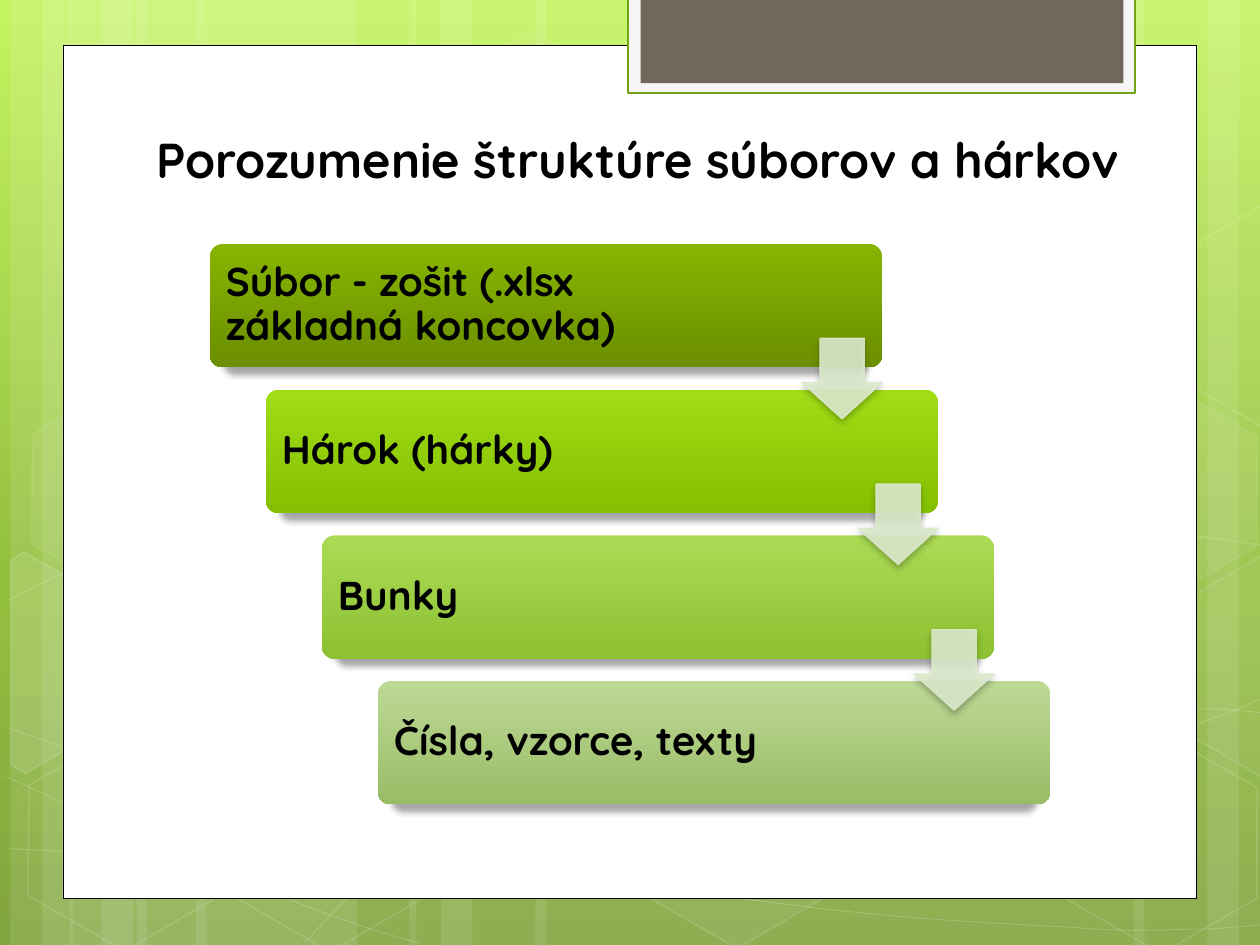
from math import cos, radians, sin

from lxml import etree
from pptx import Presentation
from pptx.dml.color import RGBColor
from pptx.enum import shapes, text
from pptx.oxml.ns import qn
from pptx.util import Pt

WHITE = RGBColor(0xFF, 0xFF, 0xFF)
BLACK = RGBColor(0, 0, 0)
PALE = RGBColor(0xF5, 0xF5, 0xF5)
GREEN = RGBColor(0x74, 0xA5, 0x10)
BROWN = RGBColor(0x71, 0x68, 0x5A)
MINT = RGBColor(0xDC, 0xEA, 0xCC)
FONT = "Quicksand"
KIND = shapes.MSO_SHAPE
ANCHOR = text.MSO_ANCHOR

WIDE, HIGH = 720, 540
TILT = 30
BACK = [(0, "C3F35F"), (62, "93BF3F"), (100, "81A53E")]

TITLE = "Porozumenie štruktúre súborov a hárkov"
STEPS = [  # text, top colour, bottom colour
    ("Súbor - zošit (.xlsx základná koncovka)", "86B400", "6B8F00"),
    ("Hárok (hárky)", "A0DD15", "85BF01"),
    ("Bunky", "ABDB55", "8DC032"),
    ("Čísla, vzorce, texty", "BDD995", "99BC67"),
]

# left, width
STRIPES = [(78, 126), (6, 36), (24, 60), (112, 126), (40, 36), (58, 60),
           (528, 126), (690, 36), (648, 60), (306, 222), (234, 36), (252, 60)]

# start point, then cubic pieces (two handles and an end) or straight ends
CURVES = [
    [(5, 485), (44, 487, 83, 489, 137, 488), (191, 487, 258, 486, 330, 479),
     (402, 472, 504, 458, 570, 444), (636, 431, 703, 409, 725, 397)],
    [(5, 343), (26, 332, 47, 321, 87, 310), (128, 299, 186, 284, 250, 279),
     (314, 274, 392, 273, 471, 279), (550, 284, 682, 307, 725, 312)],
    [(4, 444), (91, 484, 178, 523, 240, 539)],
    [(5, 416), (27, 424, 50, 432, 92, 444), (134, 454, 197, 472, 257, 485),
     (317, 497, 392, 510, 452, 517), (512, 525, 576, 528, 614, 530),
     (652, 533, 662, 531, 680, 531), (699, 531, 712, 529, 725, 528)],
    [(174, 539), (187, 525, 200, 510, 217, 498), (235, 485, 259, 470, 279, 460),
     (300, 450, 312, 446, 338, 438), (364, 431, 413, 421, 438, 416),
     (464, 411, 467, 411, 490, 410), (512, 408, 547, 405, 572, 405),
     (597, 404, 638, 405, 638, 405), (686, 405),
     (699, 405, 711, 406, 718, 407), (724, 408, 722, 407, 724, 408)],
]

# left, top, fill opacity, line opacity
HEXES = [(240.5, 26, 4, 8), (358, 424, 6, 12), (8, 425.5, 0, 12),
         (10, 224.5, 7, 8), (125.5, 426, 0, 12), (542, 326, 10, 12),
         (600.5, 427, 0, 12), (600.5, 226, 7, 8)]

# centre, points, fill opacity: hexagons cut by the slide edge
CUTS = [
    ((25.9, 385.2), [(6, 320.5), (13.5, 315.5), (69, 347), (68.5, 410.5),
                     (14.5, 442), (6, 437)], 10),
    ((709.2, 374.4), [(667, 349), (721, 317.5), (726.5, 321), (726.5, 441.5),
                      (721.5, 444), (667, 412.5)], 4),
    ((709.2, 173.5), [(667, 149), (721, 117.5), (727, 121), (726.5, 241),
                      (721.5, 244), (667, 212.5)], 0),
]


def fade(part, share):
    """Set the opacity, in percent, of the solid fill inside part."""
    tone = part.find(qn("a:solidFill")).find(qn("a:srgbClr"))
    etree.SubElement(tone, qn("a:alpha"), val=str(share * 1000))


def paint(shape, fill=None, share=100, line=None, width=1, clear=100):
    """Give a shape its fill and line, each with an opacity in percent."""
    shape.shadow.inherit = False
    props = shape.element.spPr
    if fill is None or share == 0:
        shape.fill.background()
    else:
        shape.fill.solid()
        shape.fill.fore_color.rgb = fill
        if share < 100:
            fade(props, share)
    if line is None:
        shape.line.fill.background()
    else:
        shape.line.color.rgb = line
        shape.line.width = Pt(width)
        if clear < 100:
            fade(props.find(qn("a:ln")), clear)
    return shape


def blend(owner, fill, stops):
    """Fill the owner with a gradient running from top to bottom."""
    fill.gradient()
    fill.gradient_angle = 270
    group = owner.element.find(".//" + qn("a:gsLst"))
    for old in list(group):
        group.remove(old)
    for place, tone in stops:
        stop = etree.SubElement(group, qn("a:gs"), pos=str(place * 1000))
        etree.SubElement(stop, qn("a:srgbClr"), val=tone)


def shade(shape, share, blur, drop, scale=100):
    """Add a black shadow that falls straight down."""
    group = shape.element.spPr.find(qn("a:effectLst"))
    cast = etree.SubElement(
        group, qn("a:outerShdw"), blurRad=str(Pt(blur)), dist=str(Pt(drop)),
        dir="5400000", sx=str(scale * 1000), algn="b", rotWithShape="0")
    tone = etree.SubElement(cast, qn("a:srgbClr"), val="000000")
    etree.SubElement(tone, qn("a:alpha"), val=str(share * 1000))


def put(slide, kind, *box):
    return slide.shapes.add_shape(kind, *map(Pt, box))


def trace(slide, points, close):
    (x, y), *rest = [(Pt(a), Pt(b)) for a, b in points]
    pen = slide.shapes.build_freeform(x, y)
    pen.add_line_segments(rest, close=close)
    return pen.convert_to_shape()


def bend(slide, curve):
    """Trace the ends of the pieces, then make the cubic ones curved."""
    shape = trace(slide, [piece[-2:] for piece in curve], False)
    legs = list(shape.element.iter(qn("a:lnTo")))
    for leg, piece in zip(legs, curve[1:]):
        if len(piece) == 2:
            continue
        arc = etree.Element(qn("a:cubicBezTo"))
        for x, y in zip(piece[::2], piece[1::2]):
            etree.SubElement(arc, qn("a:pt"), x=str(Pt(x) - shape.left),
                             y=str(Pt(y) - shape.top))
        leg.getparent().replace(leg, arc)
    return shape


def lean(slide, centre, points):
    """Trace the outline upright, then tilt the shape into place."""
    (mx, my), c, s = centre, cos(radians(TILT)), sin(radians(TILT))
    flat = [(mx + (x - mx) * c + (y - my) * s, my + (y - my) * c - (x - mx) * s)
            for x, y in points]
    shape = trace(slide, flat + flat[:1], True)
    shape.rotation = TILT
    return shape


def write(slide, words, box, size, anchor, inset, space=1.0):
    frame = slide.shapes.add_textbox(*map(Pt, box)).text_frame
    frame.word_wrap = True
    frame.vertical_anchor = anchor
    frame.margin_left = frame.margin_right = Pt(7.2)
    frame.margin_top = frame.margin_bottom = Pt(inset)
    para = frame.paragraphs[0]
    para.line_spacing = space
    run = para.add_run()
    run.text = words
    run.font.name, run.font.size, run.font.bold = FONT, Pt(size), True
    run.font.color.rgb = BLACK


def scene(slide):
    """Draw the green backdrop and the white panel."""
    blend(slide, slide.background.fill, BACK)
    for left, width in STRIPES:
        paint(put(slide, KIND.RECTANGLE, left, 0, width, HIGH), WHITE, 10)
    for curve in CURVES:
        paint(bend(slide, curve), line=WHITE, width=0.5, clear=20)
    for left, top, share, clear in HEXES:
        hexa = put(slide, KIND.HEXAGON, left, top, 126, 109.5)
        hexa.rotation = TILT
        hexa.adjustments[0], hexa.adjustments[1] = 0.285, 1.155
        paint(hexa, WHITE, share, WHITE, 1, clear)
    for centre, points, share in CUTS:
        paint(lean(slide, centre, points), WHITE, share, WHITE, 1, 12)
    paint(put(slide, KIND.RECTANGLE, 36, 26, 648, 487.2), WHITE, line=BLACK, width=0.5)
    paint(put(slide, KIND.RECTANGLE, 359, -1.5, 289.5, 54.5), PALE, line=GREEN, width=1.25)
    paint(put(slide, KIND.RECTANGLE, 366, -1.5, 276, 49), BROWN)


def stairs(slide):
    """Draw the stepped cards, then the arrows between them."""
    spots = [(120 + 32 * i, 139.5 + 83.25 * i) for i in range(len(STEPS))]
    for (words, light, dark), (x, y) in zip(STEPS, spots):
        card = paint(put(slide, KIND.ROUNDED_RECTANGLE, x, y, 384, 70.4))
        card.adjustments[0] = 0.1
        blend(card, card.fill, [(0, light), (100, dark)])
        shade(card, 34, 3.5, 4, 96)
        write(slide, words, (x + 2, y + 2, 302, 66.4), 23, ANCHOR.MIDDLE, 7.2, 0.9)
    for x, y in spots[:-1]:
        arrow = put(slide, KIND.DOWN_ARROW, x + 338.2, y + 53.8, 46, 46)
        arrow.adjustments[0], arrow.adjustments[1] = 0.55, 0.45
        paint(arrow, MINT, 90, MINT, 0.75, 90)
        shade(arrow, 28, 4, 2)


def main():
    deck = Presentation()
    deck.slide_width, deck.slide_height = Pt(WIDE), Pt(HIGH)
    slide = deck.slides.add_slide(deck.slide_layouts[6])
    scene(slide)
    write(slide, TITLE, (82.4, 65.8, 589.6, 45.2), 28, ANCHOR.BOTTOM, 3.6)
    stairs(slide)
    deck.save("out.pptx")


if __name__ == "__main__":
    main()
